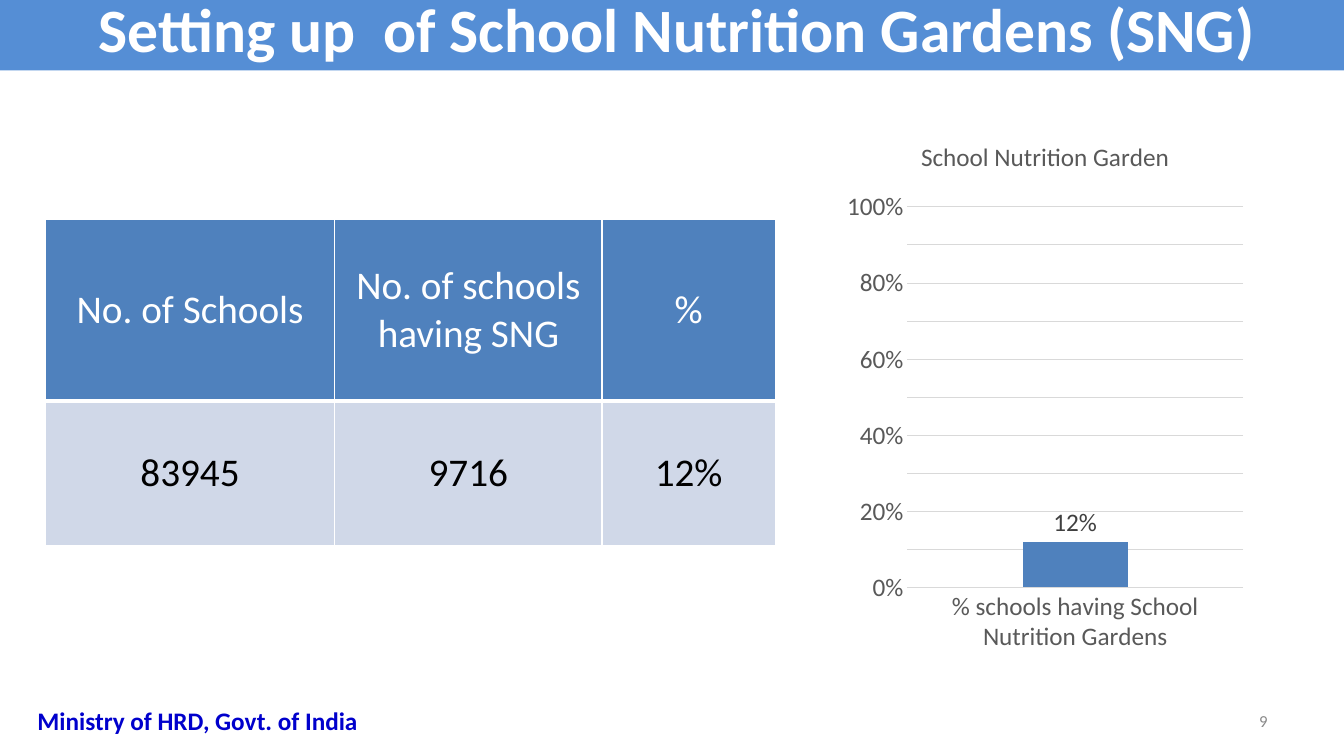
from dataclasses import dataclass

from lxml.etree import SubElement
from pptx import Presentation
from pptx.chart.data import CategoryChartData
from pptx.dml.color import RGBColor
from pptx.enum.chart import XL_CHART_TYPE, XL_LABEL_POSITION, XL_TICK_MARK
from pptx.enum.shapes import MSO_SHAPE
from pptx.enum.text import MSO_ANCHOR, PP_ALIGN
from pptx.oxml.ns import qn
from pptx.util import Inches, Pt

SLIDE_WIDTH, SLIDE_HEIGHT = Inches(13.33), Inches(7.5)


@dataclass(frozen=True)
class Theme:
    """Colours, font and type sizes of the deck."""
    font: str = "Calibri"
    banner: str = "558ED5"
    accent: str = "4F81BD"
    band: str = "D0D8E8"
    white: str = "FFFFFF"
    black: str = "000000"
    footer: str = "0000CC"
    muted: str = "898989"
    axis: str = "595959"
    label: str = "404040"
    grid: str = "D9D9D9"
    title_size: int = 44
    table_size: int = 28
    body_size: int = 18
    number_size: int = 12


THEME = Theme()


def across(percent):
    """Turn a percentage of the slide's width into a length."""
    return int(SLIDE_WIDTH * percent / 100)


def down(percent):
    """Turn a percentage of the slide's height into a length."""
    return int(SLIDE_HEIGHT * percent / 100)


def place(left, top, width, height):
    """Turn four percentages into a position and size."""
    return across(left), down(top), across(width), down(height)


def apply(target, values):
    """Set attributes from a dict of format values."""
    for name, value in values.items():
        setattr(target, name, value)


def paint(fill, color):
    """Give a fill one solid colour."""
    fill.solid()
    fill.fore_color.rgb = RGBColor.from_string(color)


def style_font(font, size, color, bold=False):
    """Apply the theme's typeface with a size, colour and weight."""
    apply(font, {"name": THEME.font, "size": Pt(size), "bold": bold})
    font.color.rgb = RGBColor.from_string(color)


def write(frame, text, size, color, bold=False, align=PP_ALIGN.CENTER):
    """Write one styled paragraph into a text frame."""
    para = frame.paragraphs[0]
    para.alignment = align
    span = para.add_run()
    span.text = text
    style_font(span.font, size, color, bold)


def add_banner(page, area, text):
    """Add the filled title bar."""
    box = page.shapes.add_shape(MSO_SHAPE.RECTANGLE, *place(*area))
    box.shadow.inherit = False
    paint(box.fill, THEME.banner)
    box.line.fill.background()
    apply(box.text_frame, {"word_wrap": True, "vertical_anchor": MSO_ANCHOR.MIDDLE})
    write(box.text_frame, text, THEME.title_size, THEME.white, True)


def add_label(page, area, text, anchor, **style):
    """Add a line of text without a frame."""
    frame = page.shapes.add_textbox(*place(*area)).text_frame
    apply(frame, {"word_wrap": True, "vertical_anchor": anchor})
    write(frame, text, **style)


def add_borders(cell, widths):
    """Draw white borders of the given widths around a cell."""
    properties = cell._tc.get_or_add_tcPr()
    for index, (side, width) in enumerate(widths.items()):
        line = SubElement(properties, qn(f"a:ln{side}"), w=str(Pt(width)))
        fill = SubElement(line, qn("a:solidFill"))
        SubElement(fill, qn("a:srgbClr"), val=THEME.white)
        properties.remove(line)
        properties.insert(index, line)


def fill_cell(cell, text, is_header):
    """Write, colour and border one table cell."""
    margins = ("margin_left", "margin_right", "margin_top", "margin_bottom")
    apply(cell, dict.fromkeys(margins, Inches(0.01 if is_header else 0)))
    cell.vertical_anchor = MSO_ANCHOR.MIDDLE
    paint(cell.fill, THEME.accent if is_header else THEME.band)
    color = THEME.white if is_header else THEME.black
    write(cell.text_frame, text, THEME.table_size, color)
    top, bottom = (1, 3) if is_header else (3, 1)
    add_borders(cell, {"L": 1, "R": 1, "T": top, "B": bottom})


def add_school_table(page, left, top, widths, heights, rows):
    """Add the table of school counts."""
    area = place(left, top, sum(widths), sum(heights))
    table = page.shapes.add_table(len(rows), len(widths), *area).table
    for column, width in zip(table.columns, widths):
        column.width = across(width)
    for row, height in zip(table.rows, heights):
        row.height = down(height)
    for row_index, texts in enumerate(rows):
        for column_index, text in enumerate(texts):
            fill_cell(table.cell(row_index, column_index), text, row_index == 0)


def style_axis(axis, line_format):
    """Style an axis and the line that stands for its rule."""
    apply(axis, {"major_tick_mark": XL_TICK_MARK.NONE,
                 "minor_tick_mark": XL_TICK_MARK.NONE})
    style_font(axis.tick_labels.font, THEME.body_size, THEME.axis)
    line_format.color.rgb = RGBColor.from_string(THEME.grid)
    line_format.width = Pt(0.75)


def add_garden_chart(page, area, title, category, share):
    """Add the column chart of the share of schools with gardens."""
    chart_values = CategoryChartData(number_format="0%")
    chart_values.categories = [category]
    chart_values.add_series("Series 1", [share])
    chart = page.shapes.add_chart(
        XL_CHART_TYPE.COLUMN_CLUSTERED, *place(*area), chart_values).chart
    apply(chart, {"has_legend": False, "has_title": True})
    style_font(chart.font, THEME.body_size, THEME.axis)
    write(chart.chart_title.text_frame, title, THEME.body_size, THEME.axis)

    value_axis = chart.value_axis
    apply(value_axis, {"minimum_scale": 0, "maximum_scale": 1, "major_unit": 0.1,
                       "has_major_gridlines": True})
    style_axis(chart.category_axis, chart.category_axis.format.line)
    style_axis(value_axis, value_axis.major_gridlines.format.line)
    value_axis.format.line.fill.background()
    apply(value_axis.tick_labels, {"number_format": "0%",
                                   "number_format_is_linked": False})

    plot = chart.plots[0]
    apply(plot, {"gap_width": 219, "overlap": -27, "vary_by_categories": False,
                 "has_data_labels": True})
    paint(plot.series[0].format.fill, THEME.accent)
    apply(plot.data_labels, {"show_value": True, "number_format": "0%",
                             "number_format_is_linked": False,
                             "position": XL_LABEL_POSITION.OUTSIDE_END})
    style_font(plot.data_labels.font, THEME.body_size, THEME.label)


def main():
    """Build the slide and save the deck."""
    deck = Presentation()
    apply(deck, {"slide_width": SLIDE_WIDTH, "slide_height": SLIDE_HEIGHT})
    page = deck.slides.add_slide(deck.slide_layouts[6])
    add_banner(page, (0, -1.87, 100.83, 11.2),
               "Setting up  of School Nutrition Gardens (SNG)")
    add_school_table(page, 3.38, 29.07, (21.53, 19.88, 12.9), (24, 19.07), [
        ("No. of Schools", "No. of schools having SNG", "%"),
        ("83945", "9716", "12%"),
    ])
    add_label(page, (71.72, 92.67, 23.33, 5.33), "9", MSO_ANCHOR.MIDDLE,
              size=THEME.number_size, color=THEME.muted, align=PP_ALIGN.RIGHT)
    add_label(page, (0, 92.67, 29.41, 5.33), "Ministry of HRD, Govt. of India",
              MSO_ANCHOR.TOP, size=THEME.body_size, color=THEME.footer, bold=True)
    add_garden_chart(page, (62.42, 15.73, 30.68, 72), "School Nutrition Garden",
                     "% schools having School Nutrition Gardens", 0.12)
    deck.save("out.pptx")


if __name__ == "__main__":
    main()
